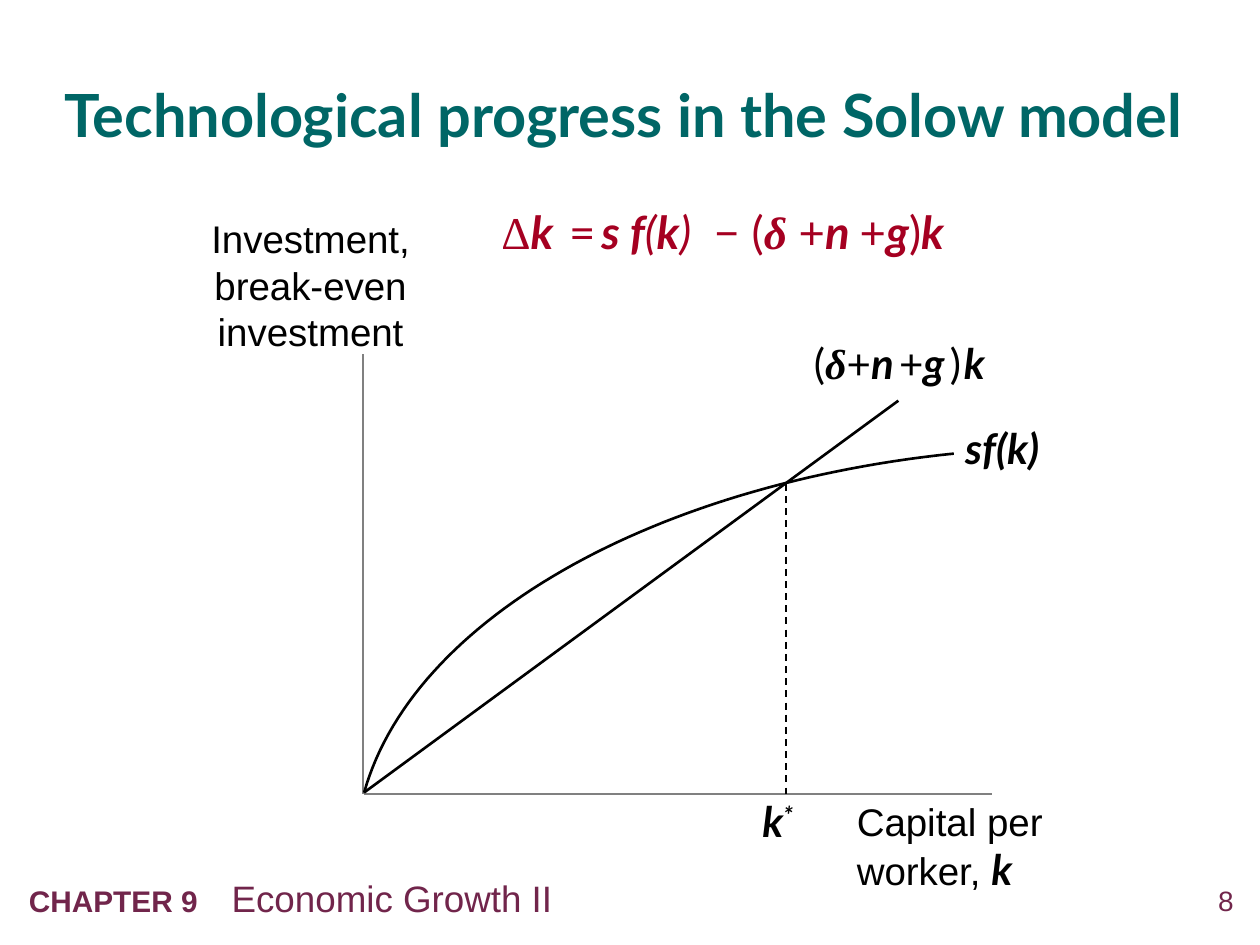
import pptx
import pptx.util
import pptx.dml.color
import pptx.enum.dml
import pptx.enum.shapes
import pptx.enum.text
import pptx.oxml.ns
import lxml.etree

Inches = pptx.util.Inches
Pt = pptx.util.Pt
rgb = pptx.dml.color.RGBColor.from_string
qn = pptx.oxml.ns.qn
align = pptx.enum.text.PP_ALIGN
anchor = pptx.enum.text.MSO_ANCHOR

colors = {"ink": "000000", "axis": "808080", "plum": "71254B",
          "teal": "006666", "red": "A50021", "white": "FFFFFF"}
serif = "Times New Roman"

deck = pptx.Presentation()
deck.slide_width = Inches(10)
deck.slide_height = Inches(7.5)
slide = deck.slides.add_slide(deck.slide_layouts[6])
shapes = slide.shapes


def text(box, runs, size=24, font="Lato", color="ink", side=align.LEFT, mid=True,
         pad=(0, 0, 0, 0), fill=None, alpha=None, space=None, tab=None):
    spot = [Inches(v) for v in box]
    if fill:
        shape = shapes.add_shape(pptx.enum.shapes.MSO_SHAPE.RECTANGLE, *spot)
        shape.shadow.inherit = False
        shape.fill.solid()
        shape.fill.fore_color.rgb = rgb(colors[fill])
        shape.line.fill.background()
        if alpha:
            tint = shape._element.spPr.find(".//" + qn("a:srgbClr"))
            lxml.etree.SubElement(tint, qn("a:alpha")).set("val", str(alpha * 1000))
    else:
        shape = shapes.add_textbox(*spot)
    frame = shape.text_frame
    frame.word_wrap = True
    frame.vertical_anchor = anchor.MIDDLE if mid else anchor.TOP
    frame.margin_left, frame.margin_top, frame.margin_right, frame.margin_bottom = [
        Inches(v) for v in pad]
    para = frame.paragraphs[0]
    para.alignment = side
    if space:
        para.line_spacing = space
    if tab:
        tabs = lxml.etree.SubElement(para._p.get_or_add_pPr(), qn("a:tabLst"))
        stop = lxml.etree.SubElement(tabs, qn("a:tab"))
        stop.set("pos", str(Inches(tab)))
        stop.set("algn", "l")
    for words, style in runs:
        run = para.add_run()
        run.text = words
        look = run.font
        look.name = style.get("font", font)
        look.size = Pt(style.get("size", size))
        look.bold = style.get("bold", False)
        look.italic = style.get("slant", False)
        look.color.rgb = rgb(colors[color])
        if "base" in style:
            run._r.get_or_add_rPr().set("baseline", str(style["base"] * 1000))


def line(start, end, color="ink", width=1, dash=False):
    link = shapes.add_connector(pptx.enum.shapes.MSO_CONNECTOR.STRAIGHT,
                                *[Inches(v) for v in start + end])
    link.line.color.rgb = rgb(colors[color])
    link.line.width = Pt(width)
    if dash:
        link.line.dash_style = pptx.enum.dml.MSO_LINE.DASH
    lxml.etree.SubElement(link._element.spPr, qn("a:effectLst"))


plain = {}
bold = {"bold": True}
slant = {"slant": True}
both = {"bold": True, "slant": True}
greek = {"bold": True, "slant": True, "font": serif}
inset = (0.1, 0.05, 0.1, 0.05)

text((9.24, 7.01, 0.55, 0.32), [("8", plain)], size=16, font="Arial", color="plum",
     side=align.RIGHT, mid=False)
text((0.13, 6.9, 8.18, 0.45),
     [("CHAPTER 9\t", {"bold": True, "size": 17}), ("Economic Growth II", plain)],
     size=21, font="Arial", color="plum", mid=False, pad=inset, tab=1.61)
text((0.51, 0.3, 8.9, 1.17), [("Technological progress in the Solow model", bold)],
     size=34, color="teal", space=1.05)

line((2.88, 2.47), (2.88, 6.3), color="axis")
line((2.89, 6.3), (7.87, 6.3), color="axis")
text((1.46, 1.71, 2.01, 1.1), [("Investment, break-even investment", plain)],
     size=22, font="Arial", side=align.CENTER, fill="white")
text((6.8, 6.33, 1.75, 0.77),
     [("Capital per worker, ", plain), ("k", {**both, "font": "Lato", "size": 24})],
     size=22, font="Arial")

bend = [(7.57, 3.6), (5.15, 3.85), (3.27, 4.93), (2.89, 6.29)]
steps = 60
dots = []
for i in range(steps + 1):
    t = i / steps
    parts = ((1 - t) ** 3, 3 * t * (1 - t) ** 2, 3 * t ** 2 * (1 - t), t ** 3)
    dots.append(tuple(Inches(sum(w * p[axis] for w, p in zip(parts, bend)))
                      for axis in (0, 1)))
path = shapes.build_freeform(*dots[0])
path.add_line_segments(dots[1:], close=False)
curve = path.convert_to_shape()
curve.shadow.inherit = False
curve.fill.background()
curve.line.color.rgb = rgb(colors["ink"])
curve.line.width = Pt(1.5)
text((7.66, 3.35, 1.04, 0.4), [("sf(k)", both)])

thin = {"size": 12}
text((6.46, 2.68, 1.92, 0.4),
     [("(", plain), ("δ", greek), ("+", plain), ("n", both), (" ", thin), ("+", plain),
      ("g", both), (" ", thin), (")", plain), (" ", {"size": 6}), ("k", both)])
line((2.89, 6.29), (7.13, 3.18), width=1.5)

text((6.05, 6.31, 0.58, 0.5), [("k", both), ("*", {**both, "base": 30})],
     pad=(0, 0, 0, 0.1))
line((6.24, 3.84), (6.24, 6.3), dash=True)

half = {"size": 13}
text((3.88, 1.57, 4.58, 0.54),
     [("Δ", {"font": serif}), ("k ", both), (" ", half), ("=", plain), (" ", half),
      ("s f", both), ("(", slant), ("k", both), (") ", slant), (" − (", plain),
      ("δ ", greek), ("+", plain), ("n ", both), ("+", plain), ("g", both),
      (")", plain), ("k", both)],
     size=26, color="red", mid=False, pad=inset, fill="white", alpha=50)

deck.save("out.pptx")
